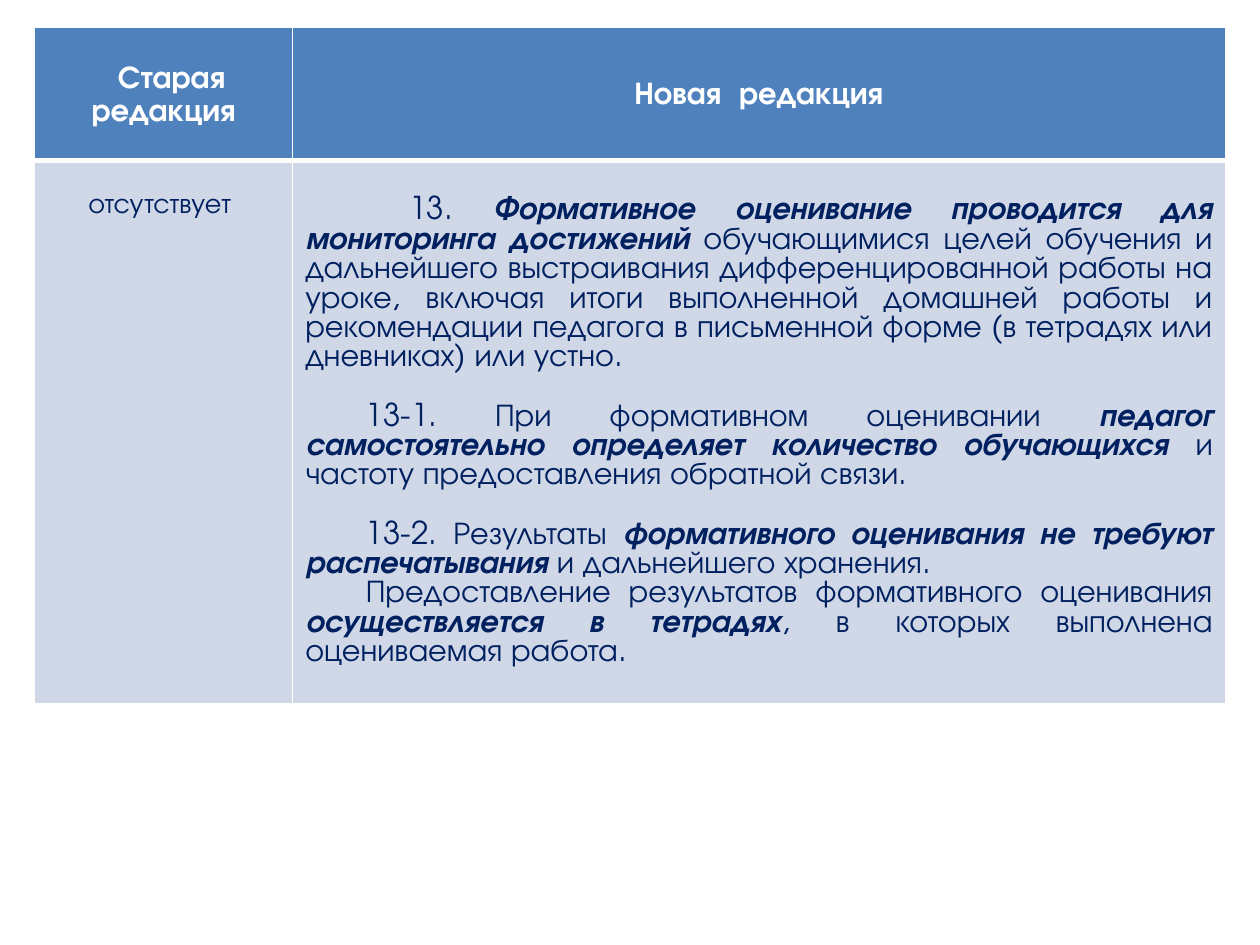
from pptx import Presentation
from pptx.dml.color import RGBColor
from pptx.enum import text
from pptx.oxml import parse_xml
from pptx.oxml import ns
from pptx.util import Cm, Pt

COLORS = {"header": "4F81BD", "body": "D0D8E8", "navy": "002060", "white": "FFFFFF"}
FONT = "TeX Gyre Adventor"
CENTER, JUSTIFY = text.PP_ALIGN.CENTER, text.PP_ALIGN.JUSTIFY

RULES = [
    (2.1, 0, [
        ("13. ", False),
        ("Формативное оценивание проводится для мониторинга достижений ", True),
        ("обучающимися целей обучения и дальнейшего выстраивания "
         "дифференцированной работы на уроке, включая итоги выполненной домашней "
         "работы и рекомендации педагога в письменной форме (в тетрадях или "
         "дневниках) или устно.", False)]),
    (1.22, 17, [
        ("13-1. При формативном оценивании ", False),
        ("педагог самостоятельно определяет количество обучающихся ", True),
        ("и частоту предоставления обратной связи.", False)]),
    (1.22, 17, [
        ("13-2. Результаты ", False),
        ("формативного оценивания не требуют распечатывания ", True),
        ("и дальнейшего хранения.", False)]),
    (1.22, 0, [
        ("Предоставление результатов формативного оценивания ", False),
        ("осуществляется в тетрадях", True),
        (", в которых выполнена оцениваемая работа.", False)]),
]


def style_cell(cell, fill, bottom_width):
    cell.fill.solid()
    cell.fill.fore_color.rgb = RGBColor.from_string(COLORS[fill])
    properties = cell._tc.get_or_add_tcPr()
    widths = {"lnL": 1, "lnR": 1, "lnT": 1, "lnB": bottom_width}
    for position, (side, width) in enumerate(widths.items()):
        properties.insert(position, parse_xml(
            f'<a:{side} {ns.nsdecls("a")} w="{Pt(width)}"><a:solidFill>'
            f'<a:srgbClr val="{COLORS["white"]}"/></a:solidFill></a:{side}>'))


def format_paragraph(paragraph, alignment, size, color, indent=0):
    paragraph.alignment = alignment
    paragraph._p.get_or_add_pPr().set("indent", str(Cm(indent)))
    font = paragraph.font
    font.name, font.size = FONT, Pt(size)
    font.color.rgb = RGBColor.from_string(COLORS[color])


def fill_header(cell, title, indent):
    style_cell(cell, "header", 3)
    cell.vertical_anchor = text.MSO_ANCHOR.MIDDLE
    cell.margin_left = cell.margin_right = Cm(0.18)
    cell.margin_top = cell.margin_bottom = 0
    cell.text = title
    paragraph = cell.text_frame.paragraphs[0]
    format_paragraph(paragraph, CENTER, 18, "white", indent)
    paragraph.font.bold = True
    paragraph.line_spacing = 1.15


def fill_old(cell):
    style_cell(cell, "body", 1)
    cell.margin_top = Cm(0.65)
    cell.text = "отсутствует "
    format_paragraph(cell.text_frame.paragraphs[0], CENTER, 16, "navy")


def fill_rules(cell):
    style_cell(cell, "body", 1)
    cell.margin_top = Cm(0.72)
    frame = cell.text_frame
    for number, (indent, space, runs) in enumerate(RULES):
        paragraph = frame.add_paragraph() if number else frame.paragraphs[0]
        format_paragraph(paragraph, JUSTIFY, 18, "navy", indent)
        paragraph.space_before = Pt(space)
        for words, emphasis in runs:
            run = paragraph.add_run()
            run.text = words
            run.font.bold = run.font.italic = emphasis


def main():
    presentation = Presentation()
    presentation.slide_width, presentation.slide_height = Cm(25.4), Cm(19.05)
    slide = presentation.slides.add_slide(presentation.slide_layouts[6])
    widths, heights = (5.2, 18.8), (2.69, 10.94)
    table = slide.shapes.add_table(
        2, 2, Cm(0.7), Cm(0.55), Cm(sum(widths)), Cm(sum(heights))).table
    for column, width in zip(table.columns, widths):
        column.width = Cm(width)
    for row, height in zip(table.rows, heights):
        row.height = Cm(height)
    fill_header(table.cell(0, 0), "Старая  редакция", 0.5)
    fill_header(table.cell(0, 1), "Новая  редакция", 0)
    fill_old(table.cell(1, 0))
    fill_rules(table.cell(1, 1))
    presentation.save("out.pptx")


if __name__ == "__main__":
    main()
